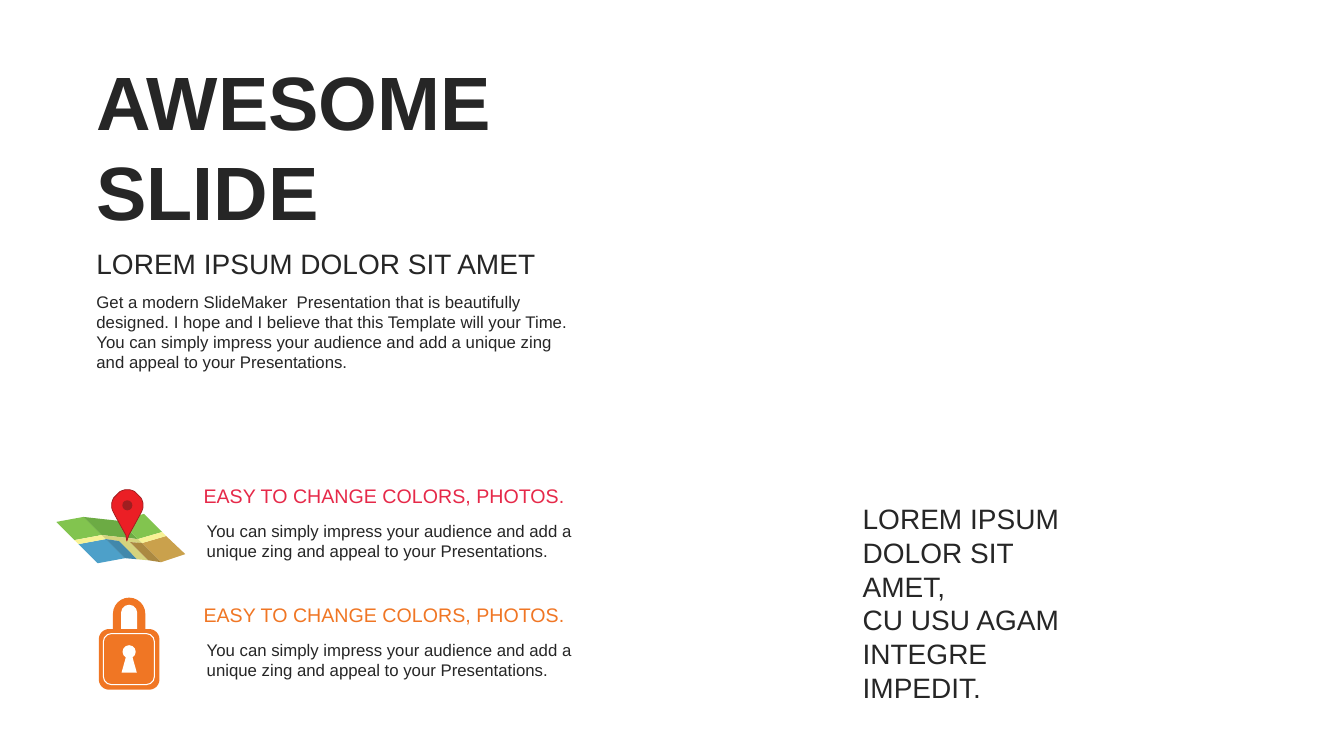
from math import cos, radians, sin

from lxml import etree
from pptx import Presentation
from pptx.dml.color import RGBColor
from pptx.enum.shapes import MSO_SHAPE
from pptx.enum.text import MSO_ANCHOR, MSO_AUTO_SIZE, PP_ALIGN
from pptx.oxml.ns import qn
from pptx.util import Cm, Pt

TOP, MID = MSO_ANCHOR.TOP, MSO_ANCHOR.MIDDLE
FIXED = MSO_AUTO_SIZE.NONE
LEFT, JUST = PP_ALIGN.LEFT, PP_ALIGN.JUSTIFY
OVAL, TRAP = MSO_SHAPE.OVAL, MSO_SHAPE.TRAPEZOID
ROUND, ARCH = MSO_SHAPE.ROUNDED_RECTANGLE, MSO_SHAPE.ROUND_2_SAME_RECTANGLE

FONT = "Arial"
INK, WHITE = "262626", "FFFFFF"
PINK, ORANGE = "E62949", "F07624"
RED, MAROON = "EB1F25", "9F1E20"
ITEM = ("You can simply impress your audience and add a unique zing "
        "and appeal to your Presentations.")

# Corners of the map pieces, on a grid 128 units wide
MAP = [
    ("4DA0C9", [(22, 54), (49, 49), (68, 68), (41, 73)]),
    ("CAA14C", [(85, 53), (109, 46), (128, 64), (104, 72)]),
    ("82C44F", [(0, 32), (27, 27), (45, 45), (18, 50)]),
    ("6CAB44", [(27, 27), (63, 31), (81, 49), (45, 45)]),
    ("82C44F", [(63, 31), (87, 24), (105, 42), (81, 49)]),
    ("F7F295", [(18, 50), (45, 45), (49, 49), (22, 54)]),
    ("F7F295", [(81, 49), (105, 42), (109, 46), (85, 53)]),
    ("D5D37D", [(45, 45), (81, 49), (85, 53), (73, 52),
                (91, 70), (80, 69), (62, 51), (49, 49)]),
    ("4288AB", [(49, 49), (62, 51), (80, 69), (68, 68)]),
    ("AB8941", [(73, 52), (85, 53), (104, 72), (91, 70)]),
]


def color(code):
    return RGBColor.from_string(code)


def paint(shape, fill=None, line=None, width=0.75):
    shape.shadow.inherit = False
    if fill:
        shape.fill.solid()
        shape.fill.fore_color.rgb = color(fill)
    else:
        shape.fill.background()
    if line:
        shape.line.color.rgb = color(line)
        shape.line.width = Pt(width)
    else:
        shape.line.fill.background()


def write(shape, box, lines, size, ink=INK, bold=False, align=LEFT,
          anchor=TOP, inset=0.25):
    shape.left, shape.top, shape.width, shape.height = map(Cm, box)
    frame = shape.text_frame
    frame.word_wrap, frame.auto_size = True, FIXED
    frame.vertical_anchor = anchor
    frame.margin_left, frame.margin_right = Cm(inset), Cm(0.25)
    frame.margin_top = frame.margin_bottom = Cm(0.13)
    for i, line in enumerate(lines):
        para = frame.add_paragraph() if i else frame.paragraphs[0]
        para.alignment, para.line_spacing = align, 1.0
        para.space_before = para.space_after = Pt(0)
        run = para.add_run()
        run.text = line
        run.font.name, run.font.size = FONT, Pt(size)
        run.font.bold, run.font.color.rgb = bold, color(ink)


def label(slide, box, *args, **style):
    write(slide.shapes.add_textbox(*map(Cm, box)), box, *args, **style)


def hero(slide, x, y, w):
    """Title, subtitle and intro."""
    write(slide.shapes.title, (x, y, w, 4.88), ["AWESOME SLIDE"], 54,
          bold=True, align=JUST, anchor=MID)
    label(slide, (x, y + 4.85, w, 1.12), ["LOREM IPSUM DOLOR SIT AMET"], 20,
          align=JUST, anchor=MID)
    body = slide.placeholders[1]
    write(body, (x + 0.25, y + 6, w - 0.23, 2.31), [
        "Get a modern SlideMaker  Presentation that is beautifully designed. "
        "I hope and I believe that this Template will your Time. You can "
        "simply impress your audience and add a unique zing and appeal to "
        "your Presentations."], 12, inset=0)
    # Plain paragraph: no bullet, no hanging indent
    props = body.text_frame.paragraphs[0]._p.get_or_add_pPr()
    props.set("marL", "0")
    props.set("indent", "0")
    etree.SubElement(props, qn("a:buNone"))


def item(slide, x, y, w, ink):
    """Coloured heading with its text."""
    label(slide, (x, y, w, 0.86), ["EASY TO CHANGE COLORS, PHOTOS."], 14, ink)
    label(slide, (x + 0.08, y + 0.91, w - 0.15, 1.27), [ITEM], 12)


def chart_map(slide, x, y, w):
    """Folded map with a pin."""
    group = slide.shapes.add_group_shape()
    unit = w / 128

    def poly(points, fill, line=None):
        path = group.shapes.build_freeform(*points[0], scale=Cm(1) * unit)
        path.add_line_segments(points[1:])
        paint(path.convert_to_shape(Cm(x), Cm(y)), fill, line, 0.5)

    for fill, points in MAP:
        poly(points, fill)

    # Pin: round head, tapered to the tip
    mid, rad = 70.5, 15.5
    head = [(mid + rad * cos(radians(a)), rad + rad * sin(radians(a)))
            for a in range(150, 391, 10)]
    side = [(12.5, 25), (6.5, 36), (1.5, 45)]
    right = [(mid + dx, dy) for dx, dy in side]
    left = [(mid - dx, dy) for dx, dy in reversed(side)]
    poly(head + right + [(mid, 51)] + left, RED, MAROON)
    dot = group.shapes.add_shape(OVAL, Cm(x + (mid - 5) * unit),
                                 Cm(y + 10.5 * unit),
                                 Cm(10 * unit), Cm(10 * unit))
    paint(dot, MAROON)


def lock(slide, x, y, w):
    """Padlock on a grid 60 units wide."""
    group = slide.shapes.add_group_shape()
    unit = w / 60
    parts = [
        (ARCH, (14, 0, 32, 33), 0.5, ORANGE, None),
        (ARCH, (22, 7, 16, 24), 0.5, WHITE, None),
        (ROUND, (0, 31, 60, 60), 0.17, ORANGE, None),
        (ROUND, (4.5, 35.5, 50.5, 50.5), 0.16, None, WHITE),
        (OVAL, (23.5, 47, 13, 13), None, WHITE, None),
        (TRAP, (22.5, 58, 15, 16), 0.3, WHITE, None),
    ]
    for kind, (dx, dy, pw, ph), bend, fill, line in parts:
        part = group.shapes.add_shape(kind, Cm(x + dx * unit),
                                      Cm(y + dy * unit),
                                      Cm(pw * unit), Cm(ph * unit))
        if bend:
            part.adjustments[0] = bend
        paint(part, fill, line)


def quote(slide, box):
    """Closing words at the right."""
    label(slide, box, ["LOREM IPSUM DOLOR SIT AMET,",
                       "CU USU AGAM INTEGRE IMPEDIT."], 20, anchor=MID)


def main():
    deck = Presentation()
    deck.slide_width, deck.slide_height = Cm(33.87), Cm(19.05)
    slide = deck.slides.add_slide(deck.slide_layouts[1])
    hero(slide, 2.18, 1.22, 12.73)
    for row, ink in enumerate((PINK, ORANGE)):
        item(slide, 4.88, 12.07 + 3 * row, 10.06, ink)
    chart_map(slide, 1.42, 12.34, 3.25)
    lock(slide, 2.49, 15.06, 1.53)
    quote(slide, (21.49, 12.5, 5.79, 5.38))
    deck.save("out.pptx")


if __name__ == "__main__":
    main()
